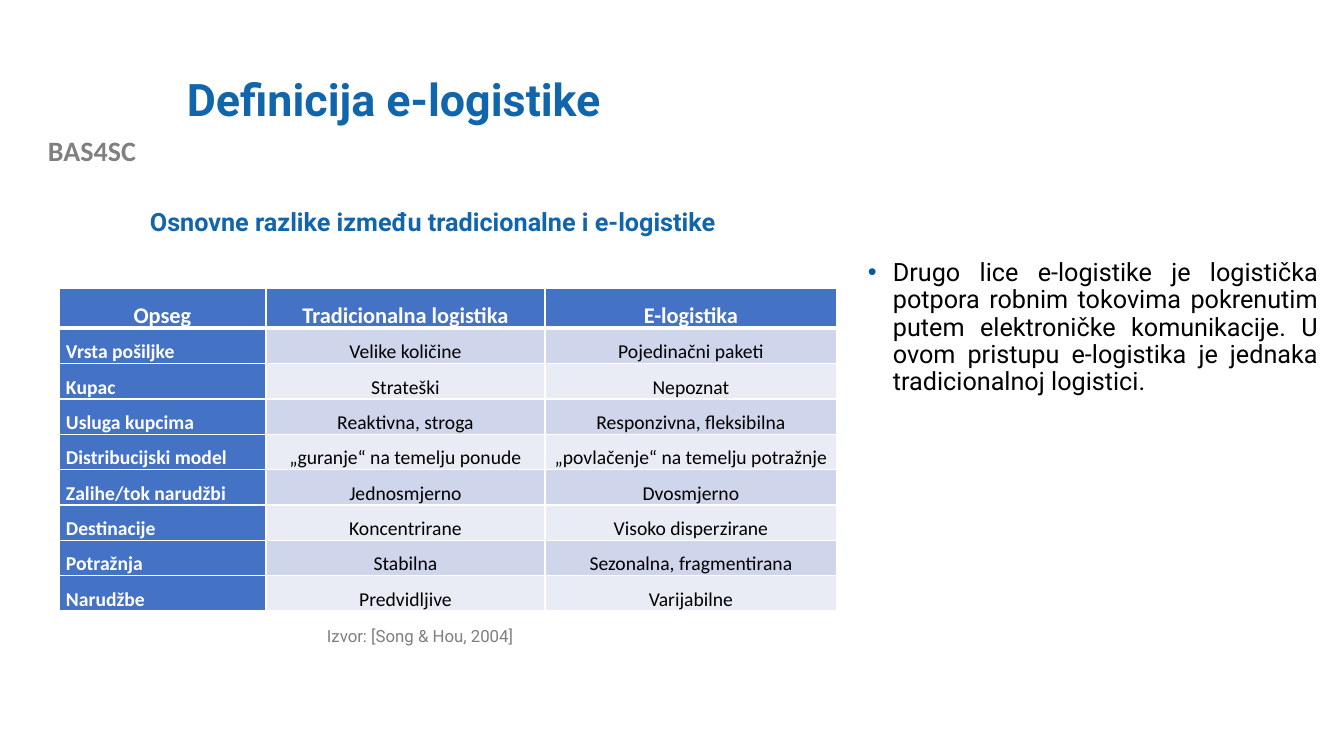
from dataclasses import dataclass

from lxml.etree import SubElement
from pptx import Presentation
from pptx.dml.color import RGBColor
from pptx.enum.text import MSO_ANCHOR, PP_ALIGN
from pptx.oxml.ns import qn
from pptx.util import Pt

EMU_PER_PX = 914400 / 100.8


def px(length):
    return round(length * EMU_PER_PX)


@dataclass(frozen=True)
class Theme:
    heading_font: str = "Roboto"
    table_font: str = "Calibri"
    blue: str = "1065AB"
    bullet: str = "015BA6"
    label: str = "808080"
    source: str = "7F7F7F"
    black: str = "000000"
    white: str = "FFFFFF"
    header_fill: str = "4472C4"
    bands: tuple = ("CFD5EA", "E9EBF5")
    title_size: int = 32
    label_size: int = 20
    body_size: int = 18
    header_size: int = 16
    cell_size: int = 14
    source_size: int = 12


class SlideBuilder:
    def __init__(self, slide, theme):
        self.slide = slide
        self.theme = theme

    def style(self, paragraph, font, size, color, bold=False):
        paragraph.font.name = font
        paragraph.font.size = Pt(size)
        paragraph.font.bold = bold
        paragraph.font.color.rgb = RGBColor.from_string(color)

    def text(self, box, content, size, color, font=None, bold=False,
             align=PP_ALIGN.LEFT, anchor=MSO_ANCHOR.TOP, spacing=1.0, bulleted=False):
        shape = self.slide.shapes.add_textbox(*map(px, box))
        frame = shape.text_frame
        frame.word_wrap = True
        frame.vertical_anchor = anchor
        paragraph = frame.paragraphs[0]
        paragraph.text = content
        paragraph.alignment = align
        paragraph.line_spacing = spacing
        if bulleted:
            self.bullet(paragraph)
        self.style(paragraph, font or self.theme.heading_font, size, color, bold)

    def bullet(self, paragraph):
        properties = paragraph._p.get_or_add_pPr()
        properties.set("marL", str(px(25)))
        properties.set("indent", str(-px(25)))
        color = SubElement(properties, qn("a:buClr"))
        SubElement(color, qn("a:srgbClr"), val=self.theme.bullet)
        SubElement(properties, qn("a:buFont"), typeface="Arial")
        SubElement(properties, qn("a:buChar"), char="•")

    def borders(self, cell, widths):
        properties = cell._tc.get_or_add_tcPr()
        for side, width in widths.items():
            line = SubElement(properties, qn(f"a:ln{side}"), w=str(Pt(width)))
            fill = SubElement(line, qn("a:solidFill"))
            SubElement(fill, qn("a:srgbClr"), val=self.theme.white)

    def cell(self, cell, content, row, column):
        theme = self.theme
        is_header = row == 0
        is_label = column == 0
        highlighted = is_header or is_label
        self.borders(cell, {"L": 1, "R": 1, "T": 3 if row == 1 else 1,
                            "B": 3 if is_header else 1})
        cell.fill.solid()
        cell.fill.fore_color.rgb = RGBColor.from_string(
            theme.header_fill if highlighted else theme.bands[(row - 1) % 2])
        cell.margin_left = cell.margin_right = px(7)
        cell.margin_top = cell.margin_bottom = 0
        cell.vertical_anchor = MSO_ANCHOR.MIDDLE if is_header else MSO_ANCHOR.TOP
        paragraph = cell.text_frame.paragraphs[0]
        paragraph.text = content
        paragraph.alignment = (PP_ALIGN.JUSTIFY if is_label and not is_header
                               else PP_ALIGN.CENTER)
        paragraph.line_spacing = 1.5
        paragraph.space_after = Pt(6)
        self.style(paragraph, theme.table_font,
                   theme.header_size if is_header else theme.cell_size,
                   theme.white if highlighted else theme.black, highlighted)

    def table(self, left, top, widths, header_height, row_height, rows):
        height = header_height + row_height * (len(rows) - 1)
        table = self.slide.shapes.add_table(
            len(rows), len(widths), px(left), px(top), px(sum(widths)), px(height)).table
        for column, width in zip(table.columns, widths):
            column.width = px(width)
        for row_index, row in enumerate(rows):
            table.rows[row_index].height = px(row_height if row_index else header_height)
            for column_index, content in enumerate(row):
                self.cell(table.cell(row_index, column_index), content,
                          row_index, column_index)


COMPARISON = [
    ("Opseg", "Tradicionalna logistika", "E-logistika"),
    ("Vrsta pošiljke", "Velike količine", "Pojedinačni paketi"),
    ("Kupac", "Strateški", "Nepoznat"),
    ("Usluga kupcima", "Reaktivna, stroga", "Responzivna, fleksibilna"),
    ("Distribucijski model", "„guranje“ na temelju ponude",
     "„povlačenje“ na temelju potražnje"),
    ("Zalihe/tok narudžbi", "Jednosmjerno", "Dvosmjerno"),
    ("Destinacije", "Koncentrirane", "Visoko disperzirane"),
    ("Potražnja", "Stabilna", "Sezonalna, fragmentirana"),
    ("Narudžbe", "Predvidljive", "Varijabilne"),
]


def main():
    presentation = Presentation()
    presentation.slide_width = px(1344)
    presentation.slide_height = px(756)
    slide = presentation.slides.add_slide(presentation.slide_layouts[6])
    theme = Theme()
    builder = SlideBuilder(slide, theme)

    builder.text((0, 129, 184, 44), "BAS4SC", theme.label_size, theme.label,
                 font=theme.table_font, bold=True, align=PP_ALIGN.CENTER)
    builder.text((177, 40, 1075, 123), "Definicija e-logistike", theme.title_size,
                 theme.blue, bold=True, anchor=MSO_ANCHOR.MIDDLE, spacing=0.9)
    builder.text((317, 623, 369, 52), "Izvor: [Song & Hou, 2004]", theme.source_size,
                 theme.source, spacing=0.9)
    builder.text((140, 201, 781, 40), "Osnovne razlike između tradicionalne i e-logistike",
                 theme.body_size, theme.blue, bold=True)
    builder.text((858, 255, 470, 147),
                 "Drugo lice e-logistike je logistička potpora robnim tokovima pokrenutim "
                 "putem elektroničke komunikacije. U ovom pristupu e-logistika je jednaka "
                 "tradicionalnoj logistici.",
                 theme.body_size, theme.black, align=PP_ALIGN.JUSTIFY,
                 spacing=0.9, bulleted=True)
    builder.table(59, 288, (207, 279, 292), 40, 35, COMPARISON)

    presentation.save("out.pptx")


if __name__ == "__main__":
    main()
